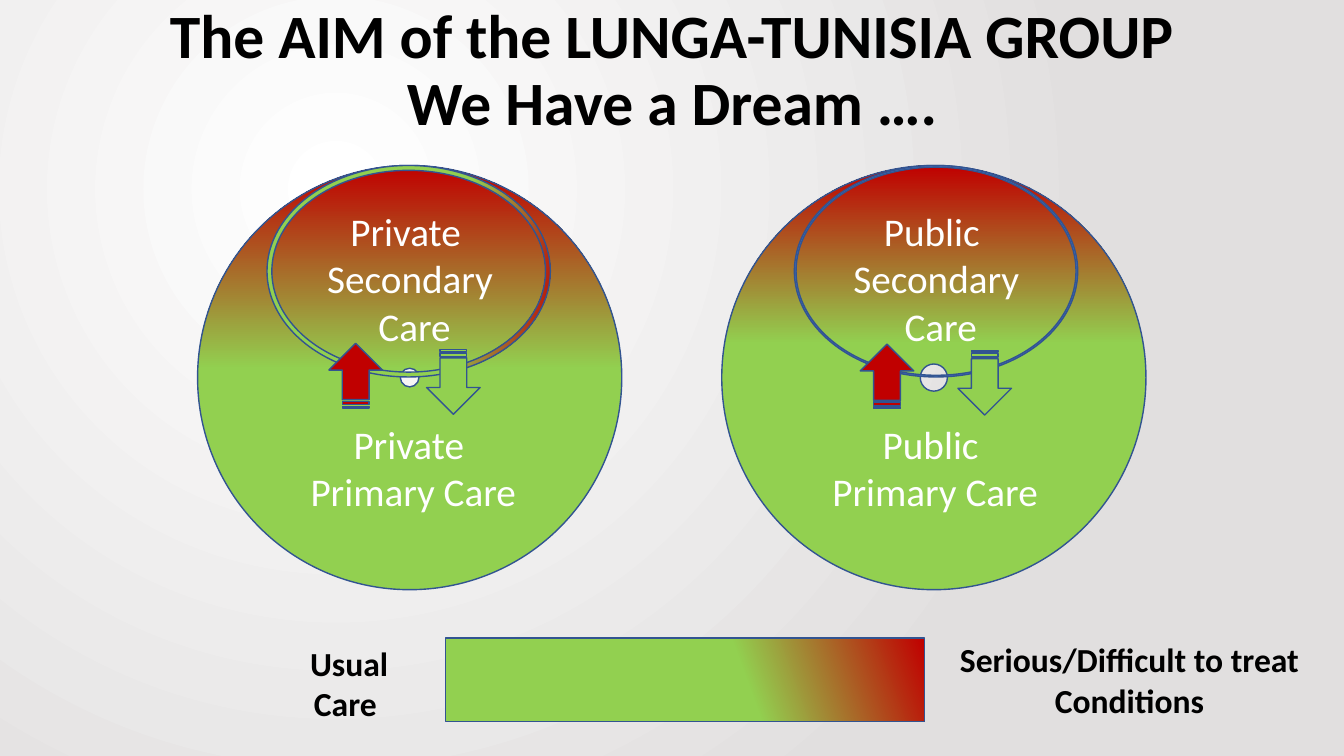
from dataclasses import dataclass

from lxml import etree
from pptx import Presentation
from pptx.dml.color import RGBColor
from pptx.dml.fill import FillFormat
from pptx.enum.shapes import MSO_SHAPE as Preset
from pptx.enum.text import MSO_ANCHOR as Anchor, MSO_AUTO_SIZE as AutoSize, PP_ALIGN as Align
from pptx.oxml.ns import qn
from pptx.shapes.autoshape import Shape
from pptx.slide import Slide
from pptx.util import Cm, Pt

GREEN, RED, BLUE, OUTLINE = "92D050", "C00000", "4472C4", "325491"
WHITE, BLACK, GREY = "FFFFFF", "000000", "E1DFDF"
FONT = "Calibri"


@dataclass
class Frame:
    """Place and size in centimetres."""
    left: float
    top: float
    width: float
    height: float


@dataclass
class Gradient:
    """Two colours; the angle runs clockwise in degrees."""
    start: float
    angle: float = 0
    first: str = GREEN
    last: str = RED


@dataclass
class Sector:
    """One care sector: a large disc with an inner ring and two arrows."""
    name: str
    disc_left: float
    disc_hole: float
    disc_fill: Gradient
    ring_left: float
    ring_width: float
    ring_fill: Gradient | str
    primary_left: float
    secondary_left: float
    arrow_left: float
    arrow_top: float


SECTORS = [
    Sector("Private", 4.98, 0.478, Gradient(0.52, 270), 6.73, 0.023,
           Gradient(0.65, 10), 7.47, 7.92, 8.15, 8.79),
    Sector("Public", 18.19, 0.468, Gradient(0.58, 270), 20.02, 0.008,
           BLUE, 20.62, 21.18, 21.54, 8.81),
]


def color(code: str) -> RGBColor:
    return RGBColor.from_string(code)


def paint(fill: FillFormat, paint_with: Gradient | str) -> None:
    if isinstance(paint_with, str):
        fill.solid()
        fill.fore_color.rgb = color(paint_with)
        return
    fill.gradient()
    fill.gradient_angle = (360 - paint_with.angle) % 360
    ends = ((paint_with.start, paint_with.first), (1, paint_with.last))
    for stop, (position, code) in zip(fill.gradient_stops, ends):
        stop.position = position
        stop.color.rgb = color(code)


def paint_background(page: Slide) -> None:
    paint(page.background.fill, Gradient(0, 0, WHITE, GREY))
    # Turn the linear gradient into a circular one
    linear = page.element.find(".//" + qn("a:lin"))
    circle = etree.Element(qn("a:path"), {"path": "circle"})
    etree.SubElement(circle, qn("a:fillToRect"),
                     {"l": "50000", "t": "50000", "r": "100000", "b": "100000"})
    linear.getparent().replace(linear, circle)


def add_figure(page: Slide, preset: Preset, frame: Frame, fill: Gradient | str) -> Shape:
    shape = page.shapes.add_shape(preset, Cm(frame.left), Cm(frame.top),
                                  Cm(frame.width), Cm(frame.height))
    shape.shadow.inherit = False
    paint(shape.fill, fill)
    shape.line.color.rgb = color(OUTLINE)
    shape.line.width = Pt(1)
    return shape


def add_text(page: Slide, frame: Frame, lines: list[str], size: int, code: str,
             bold: bool = False, wrap: bool = True) -> Shape:
    box = page.shapes.add_textbox(Cm(frame.left), Cm(frame.top),
                                  Cm(frame.width), Cm(frame.height))
    box.text_frame.word_wrap = wrap
    box.text_frame.auto_size = AutoSize.SHAPE_TO_FIT_TEXT
    para = box.text_frame.paragraphs[0]
    para.alignment = Align.CENTER
    for index, line in enumerate(lines):
        if index:
            para.add_line_break()
        span = para.add_run()
        span.text = line
        span.font.name = FONT
        span.font.size = Pt(size)
        span.font.bold = bold
        span.font.color.rgb = color(code)
    return box


def add_sector(page: Slide, sector: Sector) -> None:
    disc = add_figure(page, Preset.DONUT, Frame(sector.disc_left, 4.17, 10.69, 10.69),
                      sector.disc_fill)
    disc.adjustments[0] = sector.disc_hole
    add_text(page, Frame(sector.primary_left, 10.46, 5.89, 2.64),
             [f"{sector.name} ", "Primary Care"], 28, WHITE, wrap=False)
    ring = add_figure(page, Preset.DONUT, Frame(sector.ring_left, 4.17, 7.14, 5.33),
                      sector.ring_fill)
    ring.adjustments[0] = sector.ring_width
    add_text(page, Frame(sector.secondary_left, 5.11, 4.83, 3.84),
             [f"{sector.name} ", "Secondary", " Care"], 28, WHITE, wrap=False)


def add_arrows(page: Slide, sector: Sector) -> None:
    for shift, drop, rotation, code in ((0, 0, 270, RED), (2.46, 0.16, 90, GREEN)):
        frame = Frame(sector.arrow_left + shift, sector.arrow_top + drop, 1.63, 1.35)
        arrow = add_figure(page, Preset.STRIPED_RIGHT_ARROW, frame, code)
        arrow.rotation = rotation


def main() -> None:
    deck = Presentation()
    deck.slide_width, deck.slide_height = Cm(33.87), Cm(19.05)
    page = deck.slides.add_slide(deck.slide_layouts[6])
    paint_background(page)

    # Title
    title = add_text(page, Frame(2.34, -0.03, 29.21, 3.68),
                     ["The AIM of the LUNGA-TUNISIA GROUP", "We Have a Dream …."],
                     44, BLACK, bold=True)
    title.text_frame.auto_size = AutoSize.NONE
    title.text_frame.vertical_anchor = Anchor.MIDDLE
    title.text_frame.paragraphs[0].line_spacing = 0.9

    # Care sectors
    for sector in SECTORS:
        add_sector(page, sector)

    # Severity scale
    add_figure(page, Preset.RECTANGLE, Frame(11.23, 16.08, 12.07, 2.11), Gradient(0.62, 340))
    add_text(page, Frame(6.73, 16.08, 4.14, 2.31), ["Usual Care "], 24, BLACK, bold=True)
    add_text(page, Frame(23.32, 15.98, 10.29, 2.31),
             ["Serious/Difficult to treat Conditions"], 24, BLACK, bold=True)

    # Referral arrows
    for sector in SECTORS:
        add_arrows(page, sector)

    deck.save("out.pptx")


if __name__ == "__main__":
    main()
